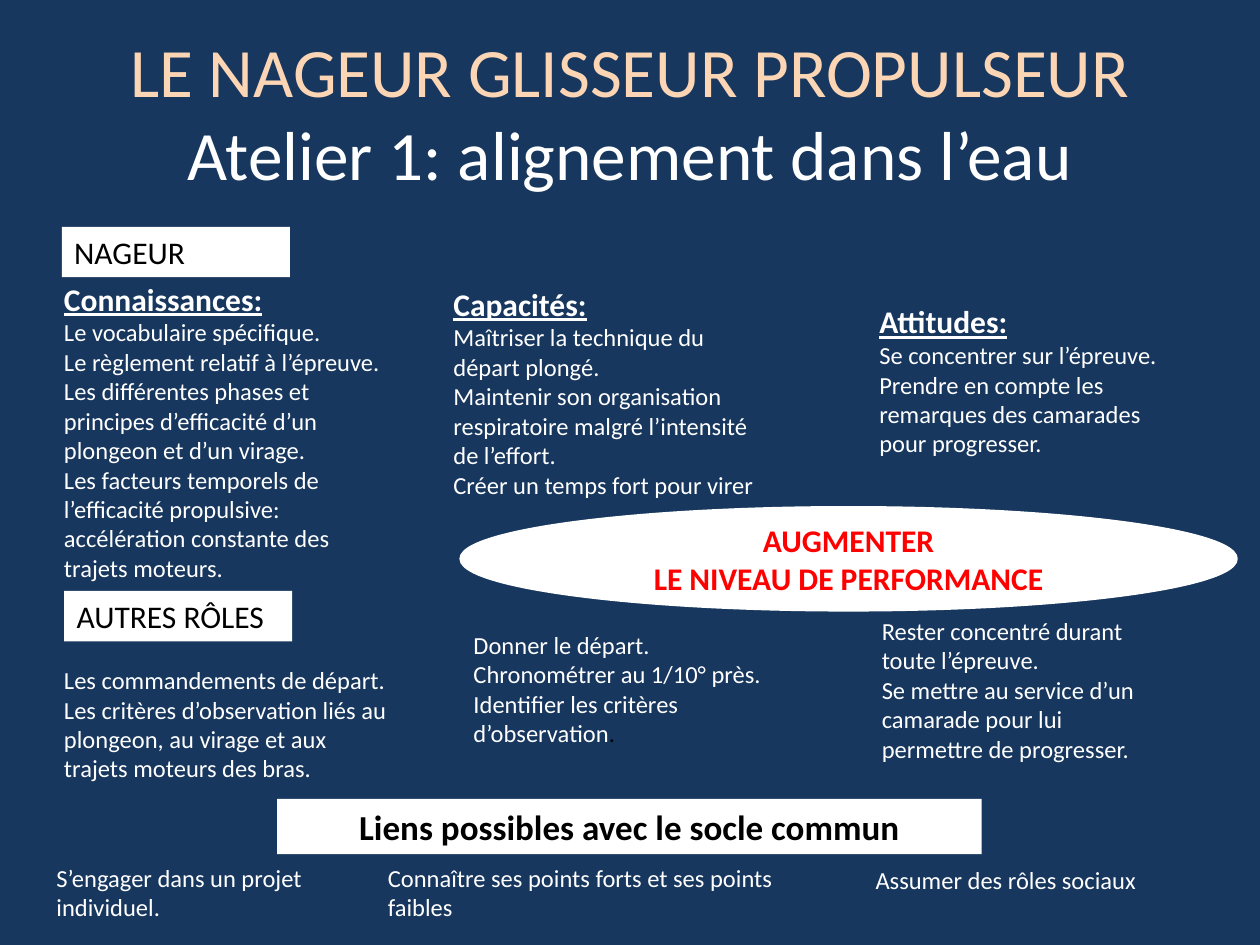
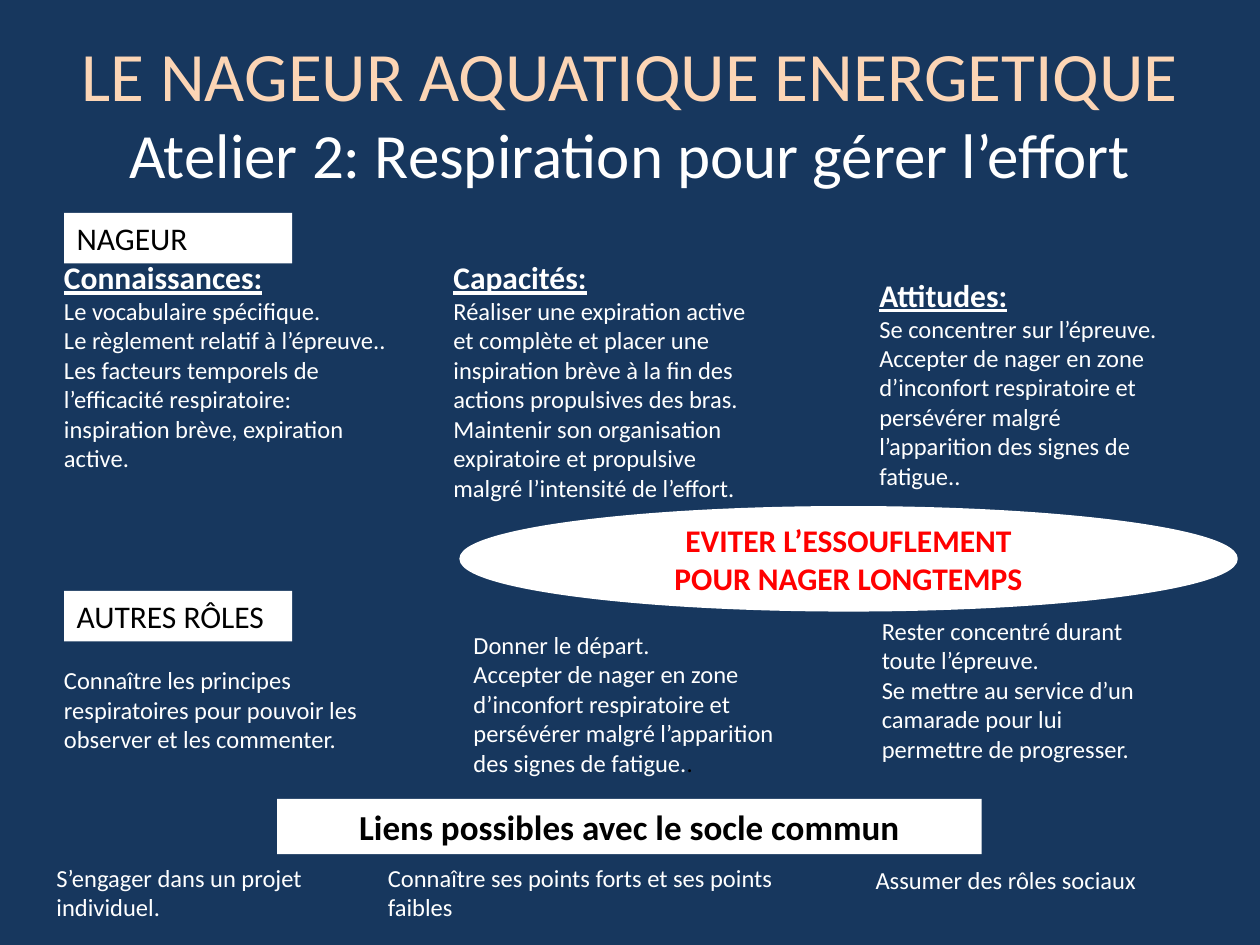
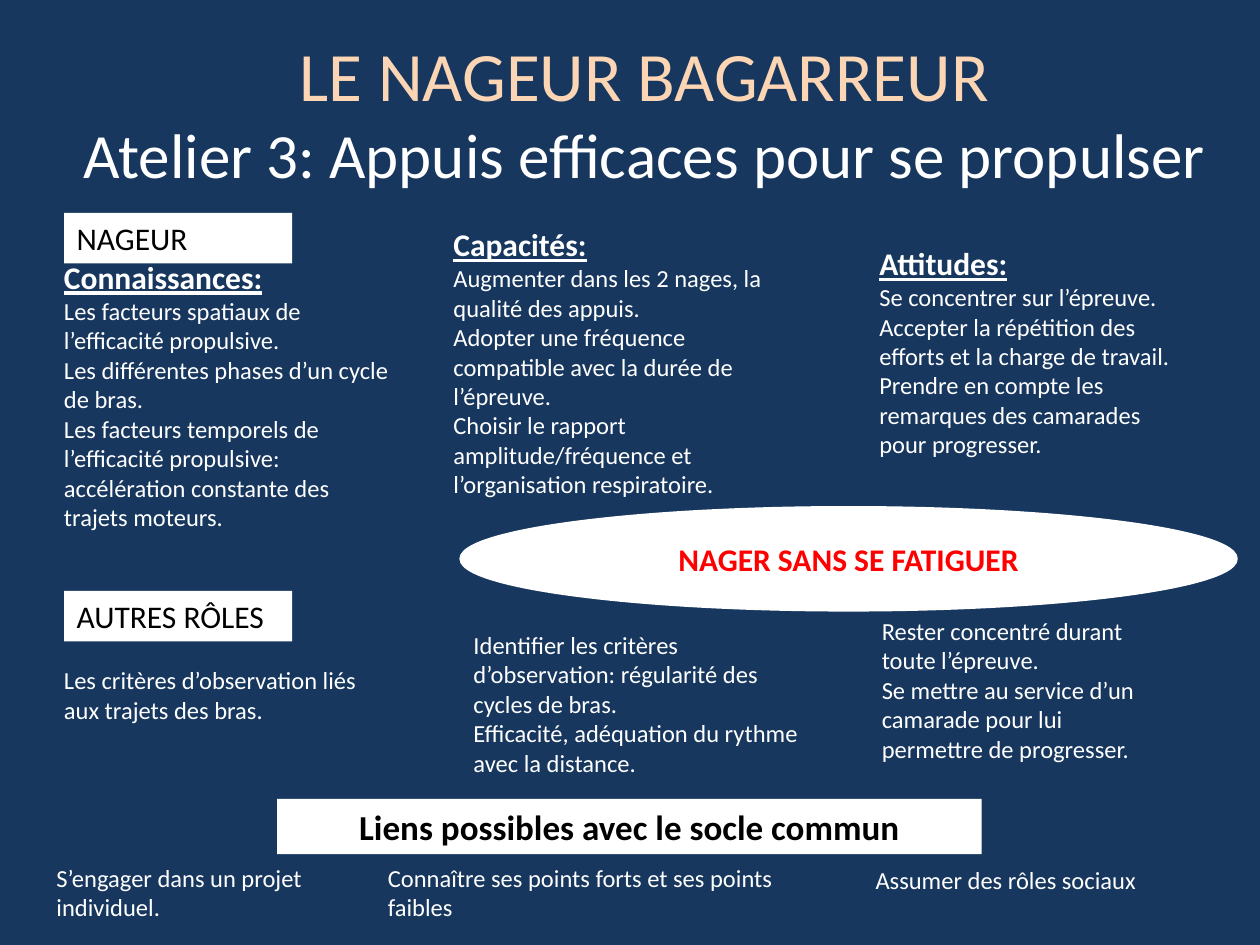
from pptx import Presentation
from pptx.dml.color import RGBColor
from pptx.enum.shapes import MSO_SHAPE
from pptx.enum.text import MSO_ANCHOR, MSO_AUTO_SIZE, PP_ALIGN
from pptx.util import Inches, Pt

NAVY, PEACH, WHITE, BLACK, RED = "17375E", "FCD5B5", "FFFFFF", "000000", "FF0000"
FONT = "Calibri"
ROLE_LABEL_SIZE = (1.81, 0.4)

# Text shared by the workshops
OTHER_ATTITUDES = [
    "Rester concentré durant toute l’épreuve.",
    "Se mettre au service d’un camarade pour lui permettre de progresser.",
]
COMMON_LINKS = [
    ((0.35, 6.8, 2.44, 0.57), "S’engager dans un projet individuel."),
    ((2.98, 6.8, 3.53, 0.57), "Connaître ses points forts et ses points faibles"),
    ((6.85, 6.82, 2.68, 0.34), "Assumer des rôles sociaux"),
]
# Heading, left and width of each swimmer column
SWIMMER_COLUMNS = [
    ("Connaissances:", 0.41, 2.83),
    ("Capacités:", 3.5, 2.68),
    ("Attitudes:", 6.88, 2.52),
]
# Left, top and width of each column for the other roles
OTHER_COLUMNS = [(0.41, 5.23, 2.76), (3.66, 4.95, 2.83), (6.9, 4.84, 2.44)]

# Each swimmer column is (top, height, lines); each other column is (height, lines)
WORKSHOPS = [
    {
        "title": "LE NAGEUR GLISSEUR PROPULSEUR",
        "subtitle": "Atelier 1: alignement dans l’eau",
        "subtitle_size": 39.6,
        "title_width": 9,
        "label_at": (0.49, 1.8),
        "swimmer": [
            (2.17, 2.52, [
                "Le vocabulaire spécifique.",
                "Le règlement relatif à l’épreuve.",
                "Les différentes phases et principes d’efficacité d’un plongeon et d’un virage.",
                "Les facteurs temporels de l’efficacité propulsive: "
                "accélération constante des trajets moteurs.",
            ]),
            (2.21, 1.82, [
                "Maîtriser la technique du départ plongé.",
                "Maintenir son organisation respiratoire malgré l’intensité de l’effort.",
                "Créer un temps fort pour virer",
            ]),
            (2.35, 1.35, [
                "Se concentrer sur l’épreuve.",
                "Prendre en compte les remarques des camarades pour progresser.",
            ]),
        ],
        "others": [
            (1.04, [
                "Les commandements de départ.",
                "Les critères d’observation liés au plongeon, au virage "
                "et aux trajets moteurs des bras.",
            ]),
            (1.04, [
                "Donner le départ.",
                "Chronométrer au 1/10° près.",
                "Identifier les critères d’observation",
            ]),
        ],
        "dark_ending": ".",
        "goal": ["AUGMENTER", "LE NIVEAU DE PERFORMANCE"],
    },
    {
        "title": "LE NAGEUR AQUATIQUE ENERGETIQUE",
        "subtitle": "Atelier 2: Respiration pour gérer l’effort",
        "subtitle_size": 36,
        "title_width": 9,
        "label_at": (0.51, 1.69),
        "swimmer": [
            (2, 1.82, [
                "Le vocabulaire spécifique.",
                "Le règlement relatif à l’épreuve..",
                "Les facteurs temporels de l’efficacité respiratoire: "
                "inspiration brève, expiration active.",
            ]),
            (2, 2.05, [
                "Réaliser une expiration active et complète et placer une inspiration "
                "brève à la fin des actions propulsives des bras.",
                "Maintenir son organisation expiratoire et propulsive "
                "malgré l’intensité de l’effort.",
            ]),
            (2.14, 1.82, [
                "Se concentrer sur l’épreuve.",
                "Accepter de nager en zone d’inconfort respiratoire et persévérer "
                "malgré l’apparition des signes de fatigue..",
            ]),
        ],
        "others": [
            (0.81, [
                "Connaître les principes respiratoires pour pouvoir "
                "les observer et les commenter.",
            ]),
            (1.28, [
                "Donner le départ.",
                "Accepter de nager en zone d’inconfort respiratoire et persévérer "
                "malgré l’apparition des signes de fatigue.",
            ]),
        ],
        "dark_ending": ".",
        "goal": ["EVITER L’ESSOUFLEMENT", "POUR NAGER LONGTEMPS"],
    },
    {
        "title": "LE NAGEUR BAGARREUR",
        "subtitle": "Atelier 3: Appuis efficaces pour se propulser",
        "subtitle_size": 36,
        "title_width": 9.23,
        "label_at": (0.51, 1.69),
        "swimmer": [
            (2, 2.29, [
                "Les facteurs spatiaux de l’efficacité propulsive.",
                "Les différentes phases d’un cycle de bras.",
                "Les facteurs temporels de l’efficacité propulsive: "
                "accélération constante des trajets moteurs.",
            ]),
            (1.74, 2.29, [
                "Augmenter dans les 2 nages, la qualité des appuis.",
                "Adopter une fréquence compatible avec la durée de l’épreuve.",
                "Choisir le rapport amplitude/fréquence et l’organisation respiratoire.",
            ]),
            (1.89, 1.82, [
                "Se concentrer sur l’épreuve.",
                "Accepter la répétition des efforts et la charge de travail.",
                "Prendre en compte les remarques des camarades pour progresser.",
            ]),
        ],
        "others": [
            (0.57, ["Les critères d’observation liés aux trajets des bras."]),
            (1.28, [
                "Identifier les critères d’observation: régularité des cycles de bras.",
                "Efficacité, adéquation du rythme avec la distance.",
            ]),
        ],
        "dark_ending": "",
        "goal": ["NAGER SANS SE FATIGUER"],
    },
]


def color(value):
    return RGBColor.from_string(value)


class WorkshopDeck:
    """Holds the deck's style and the slide being built."""

    def __init__(self):
        self.deck = Presentation()
        self.deck.slide_width, self.deck.slide_height = Inches(10), Inches(7.5)
        background = self.deck.slide_master.background.fill
        background.solid()
        background.fore_color.rgb = color(NAVY)
        self.page = None

    def new_page(self):
        self.page = self.deck.slides.add_slide(self.deck.slide_layouts[5])

    def style(self, font, size, ink, bold=False, underline=False):
        font.name, font.size, font.color.rgb = FONT, Pt(size), color(ink)
        font.bold, font.underline = bold, underline

    def fill_lines(self, frame, lines, size, ink, bold=False, align=PP_ALIGN.LEFT):
        frame.word_wrap = True
        for index, line in enumerate(lines):
            para = frame.add_paragraph() if index else frame.paragraphs[0]
            para.text, para.alignment = line, align
            self.style(para.font, size, ink, bold)

    def title(self, text, subtitle, subtitle_size, width):
        box = self.page.shapes.title
        box.left, box.top = Inches(0.5), Inches(0.26)
        box.width, box.height = Inches(width), Inches(1.25)
        frame = box.text_frame
        frame.auto_size = MSO_AUTO_SIZE.NONE
        frame.vertical_anchor = MSO_ANCHOR.MIDDLE
        para = frame.paragraphs[0]
        para.alignment = PP_ALIGN.CENTER
        self.style(para.font, 39.6, PEACH)
        para.add_run().text = text
        para.add_line_break()
        span = para.add_run()
        span.text = subtitle
        self.style(span.font, subtitle_size, WHITE)

    def text(self, place, lines, heading="", dark_ending=""):
        box = self.page.shapes.add_textbox(*map(Inches, place))
        frame = box.text_frame
        self.fill_lines(frame, [heading, *lines] if heading else lines, 14, WHITE)
        frame.auto_size = MSO_AUTO_SIZE.SHAPE_TO_FIT_TEXT
        if heading:
            self.style(frame.paragraphs[0].font, 18, WHITE, True, True)
        if dark_ending:
            span = frame.paragraphs[-1].add_run()
            span.text = dark_ending
            span.font.color.rgb = color(BLACK)

    def panel(self, kind, place):
        panel = self.page.shapes.add_shape(kind, *map(Inches, place))
        panel.shadow.inherit = False
        panel.fill.solid()
        panel.fill.fore_color.rgb = color(WHITE)
        return panel

    def label(self, place, text, size=18, bold=False, align=PP_ALIGN.LEFT):
        label = self.panel(MSO_SHAPE.RECTANGLE, place)
        label.line.fill.background()
        frame = label.text_frame
        frame.vertical_anchor = MSO_ANCHOR.TOP
        self.fill_lines(frame, [text], size, BLACK, bold, align)
        frame.auto_size = MSO_AUTO_SIZE.SHAPE_TO_FIT_TEXT

    def goal(self, lines):
        goal = self.panel(MSO_SHAPE.OVAL, (3.66, 4.03, 6.15, 0.81))
        goal.line.color.rgb = color(WHITE)
        goal.line.width = Pt(2)
        goal.text_frame.vertical_anchor = MSO_ANCHOR.MIDDLE
        self.fill_lines(goal.text_frame, lines, 18, RED, True, PP_ALIGN.CENTER)

    def workshop(self, content):
        self.new_page()
        self.title(content["title"], content["subtitle"],
                   content["subtitle_size"], content["title_width"])

        # Swimmer
        self.label((*content["label_at"], *ROLE_LABEL_SIZE), "NAGEUR")
        for (heading, left, width), (top, height, lines) in zip(
                SWIMMER_COLUMNS, content["swimmer"]):
            self.text((left, top, width, height), lines, heading)

        # Other roles
        self.label((0.51, 4.69, *ROLE_LABEL_SIZE), "AUTRES RÔLES")
        others = [*content["others"], (1.28, OTHER_ATTITUDES)]
        endings = ["", content["dark_ending"], ""]
        for column, (height, lines), ending in zip(OTHER_COLUMNS, others, endings):
            self.text((*column, height), lines, dark_ending=ending)

        # Links with the common core
        self.label((2.2, 6.34, 5.59, 0.44), "Liens possibles avec le socle commun",
                   20, True, PP_ALIGN.CENTER)
        for place, link in COMMON_LINKS:
            self.text(place, [link])

        self.goal(content["goal"])


def main():
    builder = WorkshopDeck()
    for content in WORKSHOPS:
        builder.workshop(content)
    builder.deck.save("out.pptx")


if __name__ == "__main__":
    main()
